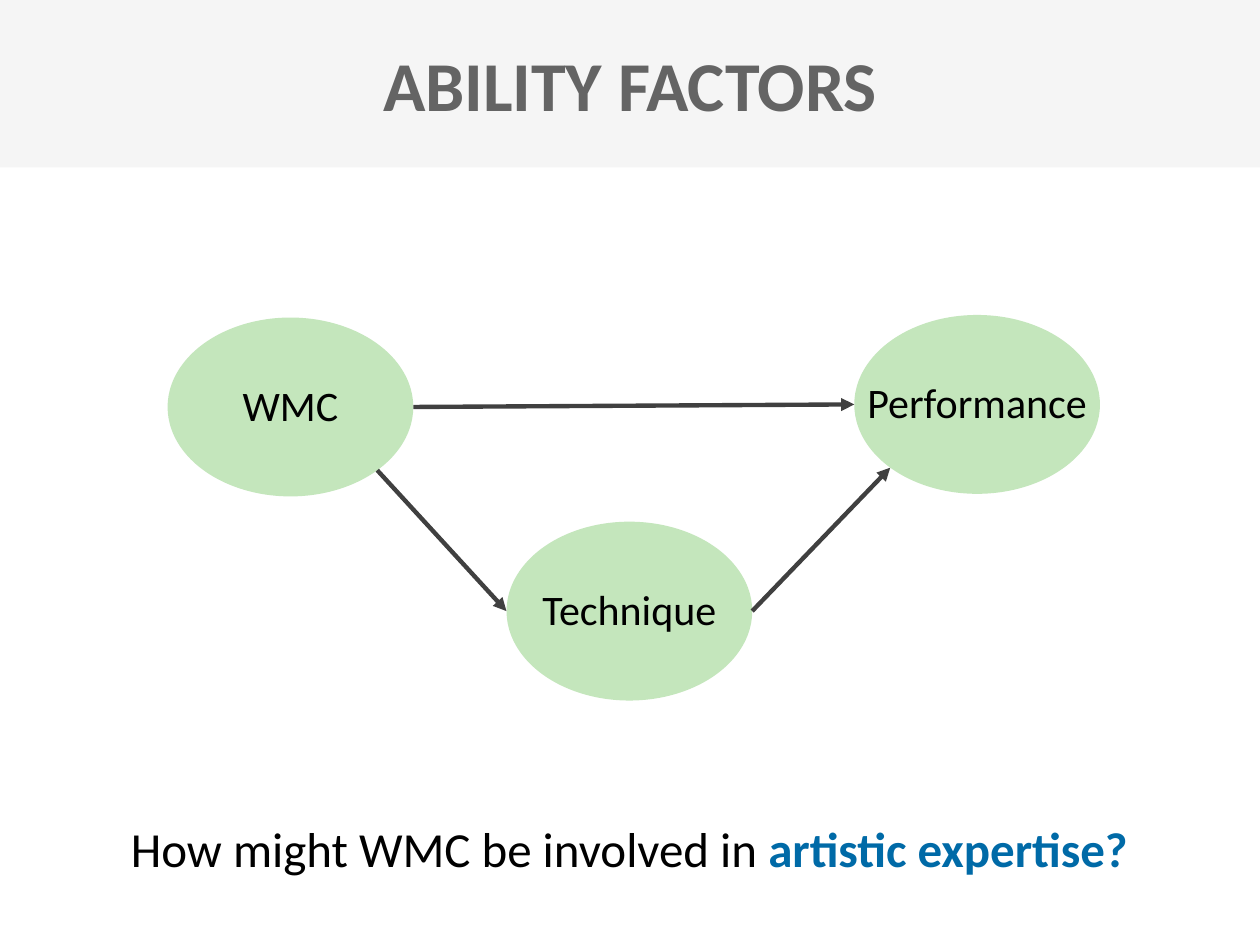
"""Build the Ability Factors slide: three linked factors and a closing question."""
import math

import pptx
import pptx.dml.color
import pptx.enum.shapes
import pptx.enum.text
import pptx.oxml.ns
import pptx.util
from lxml import etree

COLORS = {
    "banner": "F5F5F5",
    "title": "646464",
    "factor": "C4E6BC",
    "arrow": "404040",
    "text": "000000",
    "accent": "006AA7",
}
SHAPES = pptx.enum.shapes.MSO_SHAPE
ANCHOR = pptx.enum.text.MSO_ANCHOR

deck = pptx.Presentation()
deck.slide_width = pptx.util.Inches(10)
deck.slide_height = pptx.util.Inches(7.5)
page = deck.slides.add_slide(deck.slide_layouts[6])
column = deck.slide_width / 100
row = deck.slide_height / 100


def place(left, top, width, height):
    return [round(length) for length in (left * column, top * row, width * column, height * row)]


def add_text(spans, area, size, bold=False, anchor=ANCHOR.TOP):
    box = page.shapes.add_textbox(*place(*area))
    box.text_frame.word_wrap = True
    box.text_frame.vertical_anchor = anchor
    para = box.text_frame.paragraphs[0]
    para.alignment = pptx.enum.text.PP_ALIGN.CENTER
    for text, color, strong in spans:
        span = para.add_run()
        span.text = text
        span.font.name = "Calibri"
        span.font.size = pptx.util.Pt(size)
        span.font.bold = bold or strong
        span.font.color.rgb = pptx.dml.color.RGBColor.from_string(COLORS[color])


factor_width, factor_height = 19.5, 18.93
label_height, label_lift = 6.67, 0.25
factors = {
    "WMC": (23.05, 43.07, 15.8),
    "Technique": (49.95, 64.67, 22.5),
    "Performance": (77.55, 42.8, 20),
}

areas = [
    (SHAPES.OVAL, "factor", (x - factor_width / 2, y - factor_height / 2, factor_width, factor_height))
    for x, y, label_width in factors.values()
]
areas.append((SHAPES.RECTANGLE, "banner", (0, 0, 100, 17.73)))
for kind, color, area in areas:
    shape = page.shapes.add_shape(kind, *place(*area))
    shape.shadow.inherit = False
    shape.fill.solid()
    shape.fill.fore_color.rgb = pptx.dml.color.RGBColor.from_string(COLORS[color])
    shape.line.fill.background()

add_text([("ABILITY FACTORS", "title", True)], (10.4, 5.87, 79.2, 6), 40, anchor=ANCHOR.MIDDLE)
add_text(
    [("How might WMC be involved in ", "text", False), ("artistic expertise?", "accent", True)],
    (0.8, 86, 98.3, 7.6),
    28,
)
for name, (x, y, label_width) in factors.items():
    label_area = (x - label_width / 2, y - label_height / 2 - label_lift, label_width, label_height)
    add_text([(name, "text", False)], label_area, 24)

arrows = [
    ("WMC", 0, "Performance", 180),
    ("Technique", 0, "Performance", 135),
    ("WMC", 45, "Technique", 180),
]
for start, start_angle, end, end_angle in arrows:
    points = []
    for name, angle in ((start, start_angle), (end, end_angle)):
        x, y, label_width = factors[name]
        points.append(round((x + factor_width / 2 * math.cos(math.radians(angle))) * column))
        points.append(round((y + factor_height / 2 * math.sin(math.radians(angle))) * row))
    arrow = page.shapes.add_connector(pptx.enum.shapes.MSO_CONNECTOR.STRAIGHT, *points)
    arrow.line.width = pptx.util.Pt(2.5)
    arrow.line.color.rgb = pptx.dml.color.RGBColor.from_string(COLORS["arrow"])
    etree.SubElement(arrow.line._get_or_add_ln(), pptx.oxml.ns.qn("a:tailEnd"), type="triangle")
    etree.SubElement(arrow._element.spPr, pptx.oxml.ns.qn("a:effectLst"))

deck.save("out.pptx")
